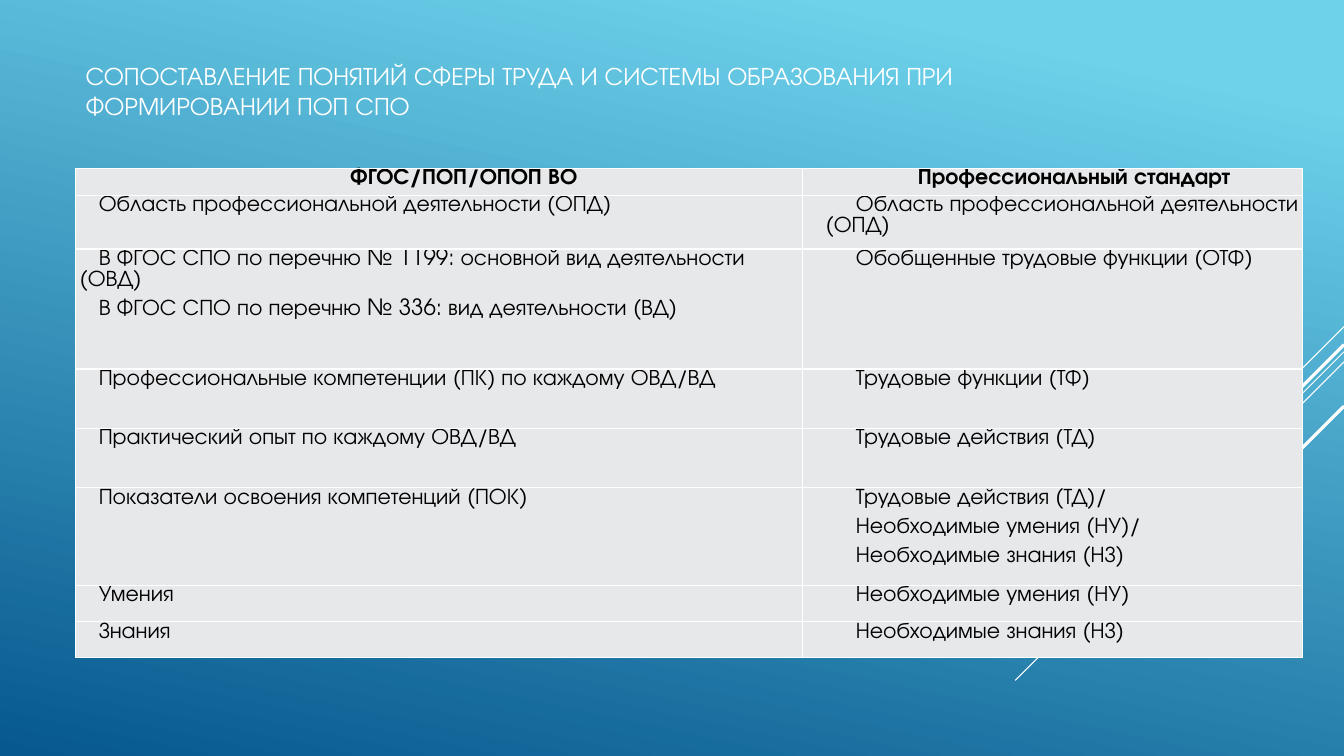
"""Builds a slide comparing education-standard terms with professional-standard terms."""
from lxml import etree
from pptx import Presentation
from pptx import util as u
from pptx.dml.color import RGBColor
from pptx.enum import shapes, text
from pptx.oxml import ns

FONT = "TeX Gyre Adventor"
WHITE = RGBColor(0xFF, 0xFF, 0xFF)
BLACK = RGBColor(0x00, 0x00, 0x00)
CELL_GREY = RGBColor(0xE7, 0xE8, 0xEA)
SKY = RGBColor(0x6E, 0xD2, 0xEB)
DEEP_BLUE = RGBColor(0x06, 0x58, 0x8E)

TITLE = "СОПОСТАВЛЕНИЕ ПОНЯТИЙ СФЕРЫ ТРУДА И СИСТЕМЫ ОБРАЗОВАНИЯ ПРИ ФОРМИРОВАНИИ ПОП СПО"
ROWS = [
    (0.26, "ФГОС/ПОП/ОПОП ВО", "Профессиональный стандарт "),
    (0.53, "Область профессиональной деятельности (ОПД)",
     "Область профессиональной деятельности (ОПД)"),
    (1.19, "В ФГОС СПО по перечню № 1199: основной вид деятельности (ОВД)\n"
           "В ФГОС СПО по перечню № 336: вид деятельности (ВД)",
     "Обобщенные трудовые функции (ОТФ)"),
    (0.59, "Профессиональные компетенции (ПК) по каждому ОВД/ВД", "Трудовые функции (ТФ)"),
    (0.59, "Практический опыт по каждому ОВД/ВД", "Трудовые действия (ТД)"),
    (0.93, "Показатели освоения компетенций (ПОК)",
     "Трудовые действия (ТД)/\nНеобходимые умения (НУ)/\nНеобходимые знания (НЗ)"),
    (0.36, "Умения", "Необходимые умения (НУ)"),
    (0.36, "Знания", "Необходимые знания (НЗ)"),
]
COLUMN_WIDTHS = (7.21, 4.96)
TABLE_LEFT, TABLE_TOP = 0.75, 1.67
HEADER_INDENT = (0, 0.49)
LEFT_INDENT = (0, 0.19)
RIGHT_INDENT = (0, 0.49)
WRAPPED_ROW, WRAPPED_INDENT = 1, (0.19, 0.3)
SLIDE_WIDTH, SLIDE_HEIGHT = 13.33, 7.5
DIAGONALS = [(3.24, 1.0, 0.75), (3.49, 3.26, 0.75), (3.59, 2.07, 0.75),
             (3.42, 1.91, 2.25), (4.03, 1.39, 2.25)]


def style_paragraph(paragraph, size, color, bold=False):
    paragraph.line_spacing = 1.0
    for run in paragraph.runs:
        run.font.name = FONT
        run.font.size = u.Pt(size)
        run.font.color.rgb = color
        run.font.bold = bold


def add_background(slide):
    fill = slide.background.fill
    fill.gradient()
    fill.gradient_angle = 258
    for stop, position, color in zip(fill.gradient_stops, (0.1, 1), (SKY, DEEP_BLUE)):
        stop.position = position
        stop.color.rgb = color


def add_diagonals(slide):
    for top, run_length, weight in DIAGONALS:
        line = slide.shapes.add_connector(
            shapes.MSO_CONNECTOR.STRAIGHT, u.Inches(SLIDE_WIDTH), u.Inches(top),
            u.Inches(SLIDE_WIDTH - run_length), u.Inches(top + run_length))
        line.line.color.rgb = WHITE
        line.line.width = u.Pt(weight)
        etree.SubElement(line._element.spPr, ns.qn("a:effectLst"))


def add_title(slide):
    box = slide.shapes.add_textbox(u.Inches(0.75), u.Inches(0.28), u.Inches(10.9), u.Inches(1.24))
    frame = box.text_frame
    frame.word_wrap = True
    frame.margin_right = u.Inches(0.3)
    frame.vertical_anchor = text.MSO_ANCHOR.MIDDLE
    frame.text = TITLE
    style_paragraph(frame.paragraphs[0], 18, WHITE)


def add_borders(cell):
    properties = cell._tc.get_or_add_tcPr()
    for index, side in enumerate(("lnL", "lnR", "lnT", "lnB")):
        border = etree.Element(ns.qn(f"a:{side}"), w=str(u.Pt(1)))
        fill = etree.SubElement(border, ns.qn("a:solidFill"))
        etree.SubElement(fill, ns.qn("a:srgbClr"), val=str(WHITE))
        properties.insert(index, border)


def paragraph_layout(row, column):
    if row == 0:
        return text.PP_ALIGN.CENTER, HEADER_INDENT
    if column == 0:
        return text.PP_ALIGN.LEFT, LEFT_INDENT
    return text.PP_ALIGN.JUSTIFY, WRAPPED_INDENT if row == WRAPPED_ROW else RIGHT_INDENT


def fill_cell(cell, content, row, column):
    cell.margin_left = cell.margin_right = u.Inches(0.04)
    cell.margin_top = cell.margin_bottom = 0
    cell.fill.solid()
    cell.fill.fore_color.rgb = CELL_GREY
    add_borders(cell)
    cell.text_frame.text = content
    alignment, (margin, indent) = paragraph_layout(row, column)
    for paragraph in cell.text_frame.paragraphs:
        style_paragraph(paragraph, 16, BLACK, bold=row == 0)
        paragraph.alignment = alignment
        paragraph.space_after = u.Pt(6)
        properties = paragraph._p.get_or_add_pPr()
        properties.set("marL", str(u.Inches(margin)))
        properties.set("indent", str(u.Inches(indent)))


def add_comparison(slide):
    height = sum(row[0] for row in ROWS)
    table = slide.shapes.add_table(
        len(ROWS), len(COLUMN_WIDTHS), u.Inches(TABLE_LEFT), u.Inches(TABLE_TOP),
        u.Inches(sum(COLUMN_WIDTHS)), u.Inches(height)).table
    table.first_row = table.horz_banding = False
    for column, width in zip(table.columns, COLUMN_WIDTHS):
        column.width = u.Inches(width)
    for row, (row_height, *contents) in enumerate(ROWS):
        table.rows[row].height = u.Inches(row_height)
        for column, content in enumerate(contents):
            fill_cell(table.cell(row, column), content, row, column)


def main():
    presentation = Presentation()
    presentation.slide_width = u.Inches(SLIDE_WIDTH)
    presentation.slide_height = u.Inches(SLIDE_HEIGHT)
    slide = presentation.slides.add_slide(presentation.slide_layouts[6])
    add_background(slide)
    add_diagonals(slide)
    add_title(slide)
    add_comparison(slide)
    presentation.save("out.pptx")


if __name__ == "__main__":
    main()
